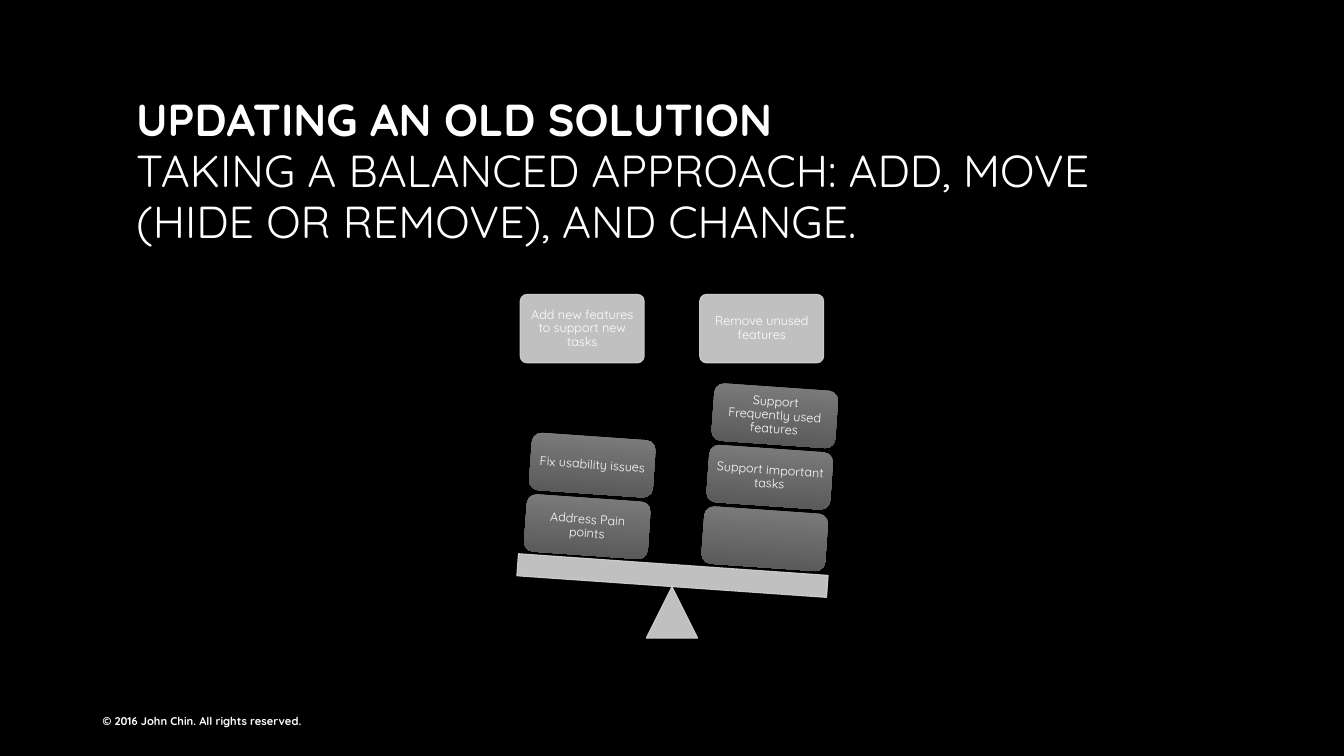
import pptx
import pptx.util
import pptx.dml.color
import pptx.enum.shapes
import pptx.enum.text
import lxml.etree

PX = 9144
FONT = "Quicksand"
WHITE = "FFFFFF"
SILVER = "D5D5D5"
TILT = 4
KINDS = pptx.enum.shapes.MSO_SHAPE
ALIGN = pptx.enum.text.PP_ALIGN
MIDDLE = pptx.enum.text.MSO_ANCHOR.MIDDLE


def px(*sizes):
    return [pptx.util.Emu(size * PX) for size in sizes]


def tint(code):
    return pptx.dml.color.RGBColor.from_string(code)


def fade(fill):
    fill.solid()
    fill.fore_color.rgb = tint(SILVER)
    node = fill._xPr.find(".//" + pptx.oxml.ns.qn("a:srgbClr"))
    lxml.etree.SubElement(node, pptx.oxml.ns.qn("a:alpha"), val="90000")


def add_run(para, text, size, bold=False):
    run = para.add_run()
    run.text = text
    run.font.name = FONT
    run.font.size = pptx.util.Pt(size)
    run.font.bold = bold
    run.font.color.rgb = tint(WHITE)


def add_title(slide, head, body):
    title = slide.shapes.title
    title.left, title.top, title.width, title.height = px(125, 67, 1083, 208)
    frame = title.text_frame
    frame.auto_size = pptx.enum.text.MSO_AUTO_SIZE.NONE
    frame.word_wrap = True
    frame.vertical_anchor = MIDDLE
    para = frame.paragraphs[0]
    para.alignment = ALIGN.LEFT
    para.line_spacing = 0.95
    add_run(para, head, 32, True)
    para.add_line_break()
    add_run(para, body, 32)


def add_foot(slide, text):
    frame = slide.shapes.add_textbox(*px(92, 695, 300, 40)).text_frame
    frame.word_wrap = True
    frame.vertical_anchor = MIDDLE
    add_run(frame.paragraphs[0], text, 8, True)


def add_form(slide, kind, box, turn=0):
    form = slide.shapes.add_shape(kind, *px(*box))
    form.shadow.inherit = False
    form.rotation = turn
    return form


def add_pale(slide, kind, box, turn=0):
    form = add_form(slide, kind, box, turn)
    fade(form.fill)
    fade(form.line.fill)
    form.line.width = pptx.util.Pt(0.75)
    return form


def add_label(form, text):
    frame = form.text_frame
    frame.word_wrap = True
    frame.vertical_anchor = MIDDLE
    inset, = px(4)
    frame.margin_left = frame.margin_right = inset
    frame.margin_top = frame.margin_bottom = inset
    para = frame.paragraphs[0]
    para.alignment = ALIGN.CENTER
    para.line_spacing = 0.9
    add_run(para, text, 9)


def add_card(slide, left, text):
    card = add_pale(slide, KINDS.ROUNDED_RECTANGLE, (left, 292, 123, 68))
    card.adjustments[0] = 0.1
    add_label(card, text)


def add_stack(slide, left, top, labels):
    for step, text in enumerate(labels):
        box = (left + 5 * step, top - 61 * step, 123, 57)
        block = add_form(slide, KINDS.ROUNDED_RECTANGLE, box, TILT)
        block.line.fill.background()
        block.fill.gradient()
        block.fill.gradient_angle = 270
        for stop, code in zip(block.fill.gradient_stops, ("7E7E7E", "565656")):
            stop.color.rgb = tint(code)
        if text:
            add_label(block, text)


def main():
    deck = pptx.Presentation()
    deck.slide_width, deck.slide_height = px(1333, 750)
    slide = deck.slides.add_slide(deck.slide_layouts[5])
    slide.background.fill.solid()
    slide.background.fill.fore_color.rgb = tint("000000")
    add_foot(slide, "© 2016 John Chin. All rights reserved.")
    add_title(slide, "UPDATING AN OLD SOLUTION",
              "TAKING A BALANCED APPROACH: ADD, MOVE (HIDE OR REMOVE), AND CHANGE.")
    add_card(slide, 516, "Add new features to support new tasks")
    add_card(slide, 694, "Remove unused features")
    add_pale(slide, KINDS.ISOSCELES_TRIANGLE, (641, 582, 51, 51))
    add_pale(slide, KINDS.RECTANGLE, (513, 560, 308, 22), TILT)
    add_stack(slide, 697, 506, ("", "Support important tasks",
                                "Support Frequently used features"))
    add_stack(slide, 521, 494, ("Address Pain points", "Fix usability issues"))
    deck.save("out.pptx")


if __name__ == "__main__":
    main()
